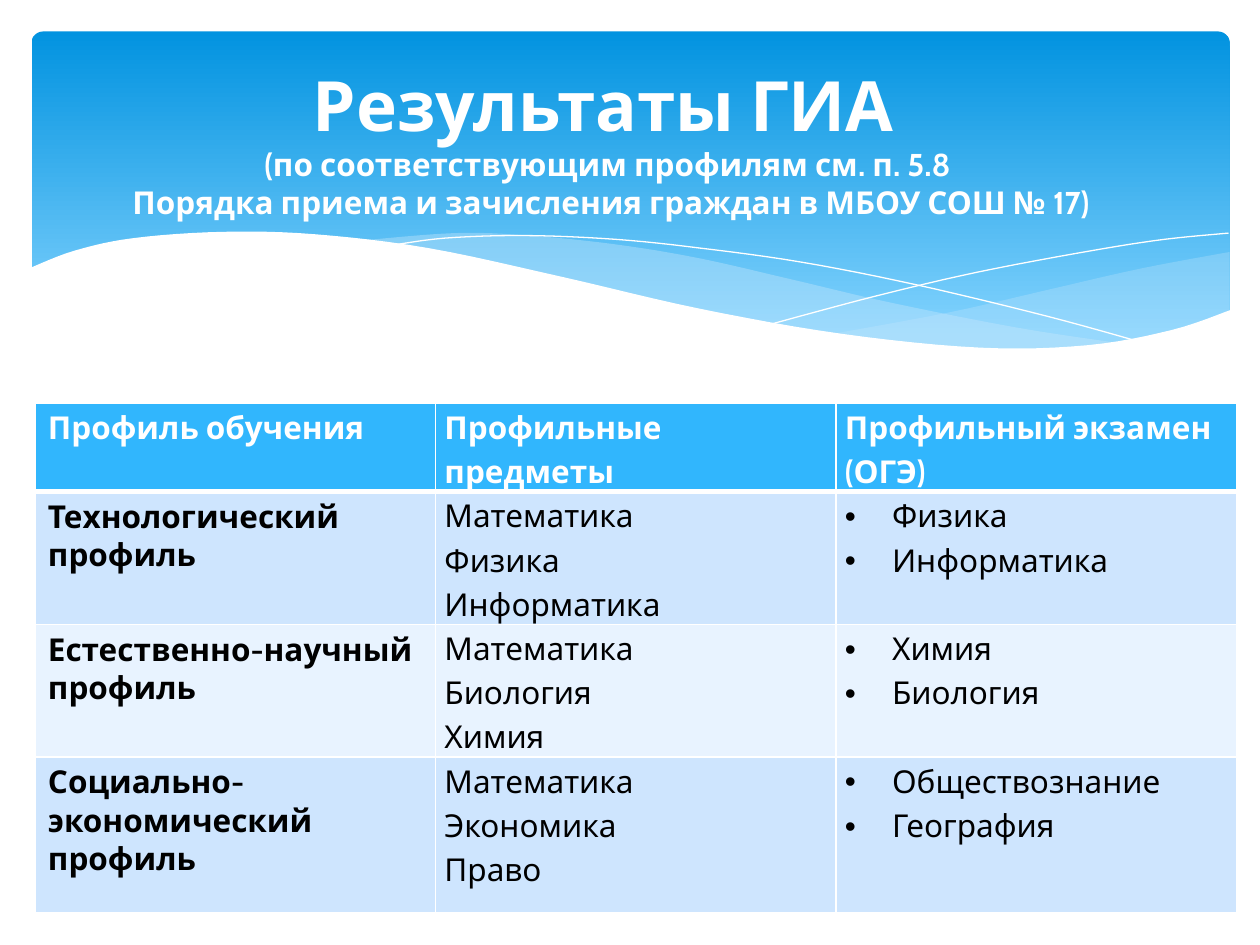
from copy import deepcopy
from dataclasses import dataclass

from lxml.etree import SubElement
from pptx import Presentation
from pptx.dml.color import RGBColor as RGB
from pptx.enum.shapes import MSO_SHAPE as Shape
from pptx.enum.text import MSO_ANCHOR as Anchor, MSO_AUTO_SIZE as AutoSize, PP_ALIGN as Align
from pptx.oxml.ns import qn
from pptx.util import Pt

# Content
TITLE = ("Результаты ГИА \v(по соответствующим профилям см. п. 5.8 \v"
         "Порядка приема и зачисления граждан в МБОУ СОШ № 17)")
HEADER = ["Профиль обучения", "Профильные предметы", "Профильный экзамен (ОГЭ)"]
PROFILES = [
    ("Технологический профиль", ["Математика", "Физика", "Информатика"],
     ["Физика", "Информатика"]),
    ("Естественно-научный профиль", ["Математика", "Биология", "Химия"],
     ["Химия", "Биология"]),
    ("Социально-экономический профиль", ["Математика", "Экономика", "Право"],
     ["Обществознание", "География"]),
]

# Guide points of the banner's curves
RIGHT_SWELL_TOP = [(702.7, 144), (652.3, 153.4), (599, 165.6), (542.2, 178.6), (475.9, 190.8)]
RIGHT_SWELL_BASE = [(475.9, 190.8), (517.7, 195.8), (562.3, 199.4), (601.2, 199.4),
                    (640.1, 195.8), (673.2, 188.6), (702.7, 177.8)]
LEFT_SWELL_TOP = [(643, 196.6), (581, 187.2), (508.3, 172.8), (452.9, 159.8), (399.6, 147.6),
                  (352.1, 139.7), (302.4, 134.6), (259.9, 133.2), (205.9, 137.5)]
LEFT_SWELL_BASE = [(205.9, 137.5), (260.6, 146.2), (323.3, 159.8), (407.5, 178.6),
                   (478.8, 191.5), (529.9, 198), (581, 200.2), (643, 196.6)]
FALLING_LINE = [(222.5, 140.4), (254.2, 136.1), (299.5, 134.6), (352.1, 136.8), (400.3, 141.8),
                (457.9, 149.8), (523.4, 162.7), (598.3, 180.7), (653, 195.8)]
RISING_LINE = [(441.4, 185), (500.4, 169.2), (558.7, 155.5), (623.5, 143.3),
               (665.3, 136.8), (702, 133.2)]
WAVE_EDGE = [(16.6, 153.4), (42.5, 143.3), (76.3, 136.1), (127.4, 132.5), (180, 133.9),
             (244.8, 141.8), (321.8, 158.4), (399.6, 176.4), (481, 190.8), (560.2, 198.7),
             (621.4, 197.3), (669.6, 188.6), (703.4, 177.1)]
WAVE_FLOOR = [(703.4, 236.9), (16.6, 236.9)]


@dataclass(frozen=True)
class Theme:
    font: str = "Cabin"
    title_size: float = 39.6
    text_size: float = 18
    white: str = "FFFFFF"
    black: str = "000000"
    banner_top: str = "0293E0"
    banner_base: str = "83D3FE"
    swell: str = "C6E7FC"
    header: str = "31B6FD"
    bands: tuple = ("CEE5FE", "E8F3FF")


THEME = Theme()


def rgb(color):
    return RGB.from_string(color)


def style(font, size, color, bold):
    font.name, font.size, font.bold = THEME.font, Pt(size), bold
    font.color.rgb = rgb(color)


def smooth(points, steps=6):
    """Catmull-Rom curve through the points."""
    ends = [points[0], *points, points[-1]]
    curve = [points[0]]
    for a, b, c, d in zip(ends, ends[1:], ends[2:], ends[3:]):
        for step in range(1, steps + 1):
            t = step / steps
            curve.append(tuple(
                q + t / 2 * (r - p + t * (2 * p - 5 * q + 4 * r - s + t * (3 * (q - r) + s - p)))
                for p, q, r, s in zip(a, b, c, d)))
    return curve


def draw_outline(shapes, points, closed=True):
    start, *rest = [(Pt(x), Pt(y)) for x, y in points]
    builder = shapes.build_freeform(*start)
    builder.add_line_segments(rest, close=closed)
    outline = builder.convert_to_shape()
    outline.shadow.inherit = False
    return outline


def fill_area(shapes, points, color, opacity=100):
    area = draw_outline(shapes, points)
    area.fill.solid()
    area.fill.fore_color.rgb = rgb(color)
    area.line.fill.background()
    if opacity < 100:
        tint = area.element.spPr.find(".//" + qn("a:srgbClr"))
        SubElement(tint, qn("a:alpha"), val=str(opacity * 1000))


def add_banner(shapes):
    banner = shapes.add_shape(Shape.ROUNDED_RECTANGLE, Pt(18), Pt(18), Pt(684.7), Pt(194.4))
    banner.adjustments[0] = 0.034
    banner.shadow.inherit = False
    banner.line.fill.background()
    banner.fill.gradient()
    banner.fill.gradient_angle = 270
    stops = [(0, THEME.banner_top), (0.9, THEME.banner_base)]
    for stop, (position, color) in zip(banner.fill.gradient_stops, stops):
        stop.position, stop.color.rgb = position, rgb(color)

    fill_area(shapes, smooth(RIGHT_SWELL_TOP) + smooth(RIGHT_SWELL_BASE), THEME.swell, 29)
    fill_area(shapes, smooth(LEFT_SWELL_TOP) + smooth(LEFT_SWELL_BASE), THEME.swell, 40)
    for guide in (FALLING_LINE, RISING_LINE):
        curve = draw_outline(shapes, smooth(guide), closed=False)
        curve.fill.background()
        curve.line.color.rgb = rgb(THEME.white)
        curve.line.width = Pt(0)
    fill_area(shapes, smooth(WAVE_EDGE) + WAVE_FLOOR, THEME.white)


def add_title(shapes):
    title = shapes.title
    shapes.element.append(title.element)  # bring in front of the banner
    title.left, title.top, title.width, title.height = Pt(14.4), Pt(31.7), Pt(669.6), Pt(98.6)
    frame = title.text_frame
    frame.auto_size, frame.vertical_anchor = AutoSize.NONE, Anchor.MIDDLE
    heading = frame.paragraphs[0]
    heading.text = TITLE
    heading.alignment = Align.CENTER
    for i, run in enumerate(heading.runs):
        style(run.font, THEME.text_size if i else THEME.title_size, THEME.white, True)
    # Line breaks take the type size of the run before them
    for line_break in heading._p.findall(qn("a:br")):
        line_break.append(deepcopy(line_break.getprevious().find(qn("a:rPr"))))


def add_borders(cell, bottom):
    for side, width in (("L", 1), ("R", 1), ("T", 1), ("B", bottom)):
        border = SubElement(cell._tc.get_or_add_tcPr(), qn("a:ln" + side), w=str(Pt(width)))
        fill = SubElement(border, qn("a:solidFill"))
        SubElement(fill, qn("a:srgbClr"), val=THEME.white)


def add_bullet(paragraph):
    props = paragraph._p.get_or_add_pPr()
    props.set("marL", str(Pt(27)))
    props.set("indent", str(Pt(-27)))
    SubElement(props, qn("a:buFont"), typeface="Arial")
    SubElement(props, qn("a:buChar"), char="•")


def add_profiles(shapes):
    rows = [HEADER, *PROFILES]
    heights = [45.4, 69, 68.4, 89.3]
    table = shapes.add_table(len(rows), len(HEADER), Pt(20.2), Pt(230.4),
                             Pt(686.4), Pt(sum(heights))).table
    for column in table.columns:
        column.width = Pt(228.8)
    for r, (row, height) in enumerate(zip(rows, heights)):
        table.rows[r].height = Pt(height)
        is_header = r == 0
        for c, content in enumerate(row):
            cell = table.cell(r, c)
            add_borders(cell, bottom=3 if is_header else 1)
            cell.fill.solid()
            cell.fill.fore_color.rgb = rgb(THEME.header if is_header else THEME.bands[(r - 1) % 2])
            if c:
                cell.margin_left = cell.margin_right = Pt(5)
                cell.margin_top = cell.margin_bottom = 0
            cell.text_frame.text = content if isinstance(content, str) else "\n".join(content)
            for paragraph in cell.text_frame.paragraphs:
                if c:
                    paragraph.line_spacing = 1.15
                if c == 2 and not is_header:
                    add_bullet(paragraph)
                style(paragraph.runs[0].font, THEME.text_size,
                      THEME.white if is_header else THEME.black, is_header or c == 0)


def main():
    deck = Presentation()
    deck.slide_width, deck.slide_height = Pt(720), Pt(540)
    shapes = deck.slides.add_slide(deck.slide_layouts[5]).shapes
    add_banner(shapes)
    add_title(shapes)
    add_profiles(shapes)
    deck.save("out.pptx")


if __name__ == "__main__":
    main()
